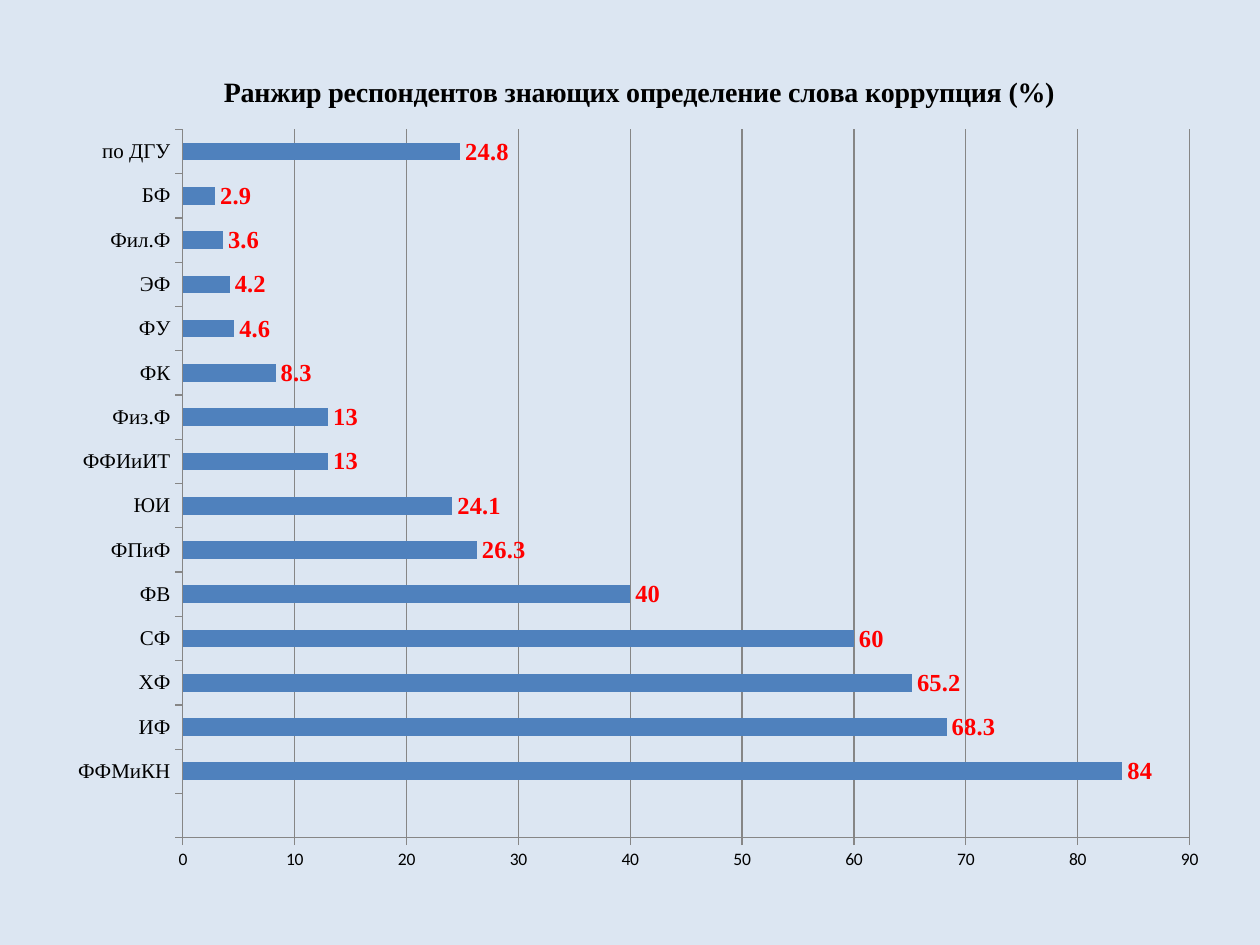
from lxml.etree import SubElement
from pptx import Presentation
from pptx.chart.data import CategoryChartData
from pptx.dml.color import RGBColor
from pptx.enum.chart import XL_CHART_TYPE as ChartType
from pptx.enum.chart import XL_LABEL_POSITION as LabelPosition
from pptx.enum.chart import XL_TICK_MARK as TickMark
from pptx.oxml.ns import qn
from pptx.util import Cm, Pt

TITLE = "Ранжир респондентов знающих определение слова коррупция (%)"
FACULTIES = [
    ("", None), ("ФФМиКН", 84), ("ИФ", 68.3), ("ХФ", 65.2), ("СФ", 60),
    ("ФВ", 40), ("ФПиФ", 26.3), ("ЮИ", 24.1), ("ФФИиИТ", 13), ("Физ.Ф", 13),
    ("ФК", 8.3), ("ФУ", 4.6), ("ЭФ", 4.2), ("Фил.Ф", 3.6), ("БФ", 2.9),
    ("по ДГУ", 24.8),
]
CHART_BOX = (Cm(1.09), Cm(0.91), Cm(23.6), Cm(17))
PLOT_FRACTIONS = {"x": 0.11, "y": 0.1, "w": 0.86, "h": 0.84}


class Theme:
    background = RGBColor(0xDC, 0xE6, 0xF2)
    bar = RGBColor(0x4F, 0x81, 0xBD)
    grid = RGBColor(0x86, 0x86, 0x86)
    text = RGBColor(0, 0, 0)
    value = RGBColor(0xFF, 0, 0)
    serif = "Times New Roman"
    base_font = {"name": "Calibri", "size": Pt(10)}
    title_font = {"name": serif, "size": Pt(16), "bold": True}
    category_font = {"name": serif, "size": Pt(12)}
    label_font = {"name": serif, "size": Pt(14), "bold": True}


def set_attributes(target, values):
    for name, value in values.items():
        setattr(target, name, value)


def style_font(font, values, color=Theme.text):
    set_attributes(font, values)
    font.color.rgb = color


def style_line(line):
    line.color.rgb = Theme.grid
    line.width = Pt(0.75)


def place_plot(chart, fractions):
    """Fix the inner plot area as fractions of the chart."""
    plot_area = chart.plots[0]._element.getparent()
    for old_layout in plot_area.findall(qn("c:layout")):
        plot_area.remove(old_layout)
    layout = SubElement(plot_area, qn("c:layout"))
    plot_area.insert(0, layout)
    manual = SubElement(layout, qn("c:manualLayout"))
    settings = {"layoutTarget": "inner", "xMode": "edge", "yMode": "edge", **fractions}
    for name, value in settings.items():
        SubElement(manual, qn(f"c:{name}")).set("val", str(value))


def add_ranking_chart(slide):
    data = CategoryChartData()
    data.categories = [name for name, _ in FACULTIES]
    data.add_series("Series 1", [value for _, value in FACULTIES])
    chart = slide.shapes.add_chart(ChartType.BAR_CLUSTERED, *CHART_BOX, data).chart
    chart.has_legend = False
    style_font(chart.font, Theme.base_font)

    chart.has_title = True
    title_frame = chart.chart_title.text_frame
    title_frame.text = TITLE
    style_font(title_frame.paragraphs[0].runs[0].font, Theme.title_font)
    chart.chart_title.include_in_layout = False

    for axis in (chart.category_axis, chart.value_axis):
        axis.major_tick_mark = TickMark.OUTSIDE
        style_line(axis.format.line)
    style_font(chart.category_axis.tick_labels.font, Theme.category_font)
    set_attributes(chart.value_axis, {
        "minimum_scale": 0, "maximum_scale": 90, "major_unit": 10,
        "has_major_gridlines": True,
    })
    style_line(chart.value_axis.major_gridlines.format.line)

    plot = chart.plots[0]
    set_attributes(plot, {"gap_width": 150, "vary_by_categories": False,
                          "has_data_labels": True})
    set_attributes(plot.data_labels, {"show_value": True,
                                      "position": LabelPosition.OUTSIDE_END})
    style_font(plot.data_labels.font, Theme.label_font, Theme.value)
    bar_fill = plot.series[0].format.fill
    bar_fill.solid()
    bar_fill.fore_color.rgb = Theme.bar
    place_plot(chart, PLOT_FRACTIONS)


def main():
    presentation = Presentation()
    set_attributes(presentation, {"slide_width": Cm(25.4), "slide_height": Cm(19.05)})
    slide = presentation.slides.add_slide(presentation.slide_layouts[6])
    slide.background.fill.solid()
    slide.background.fill.fore_color.rgb = Theme.background
    add_ranking_chart(slide)
    presentation.save("out.pptx")


if __name__ == "__main__":
    main()
